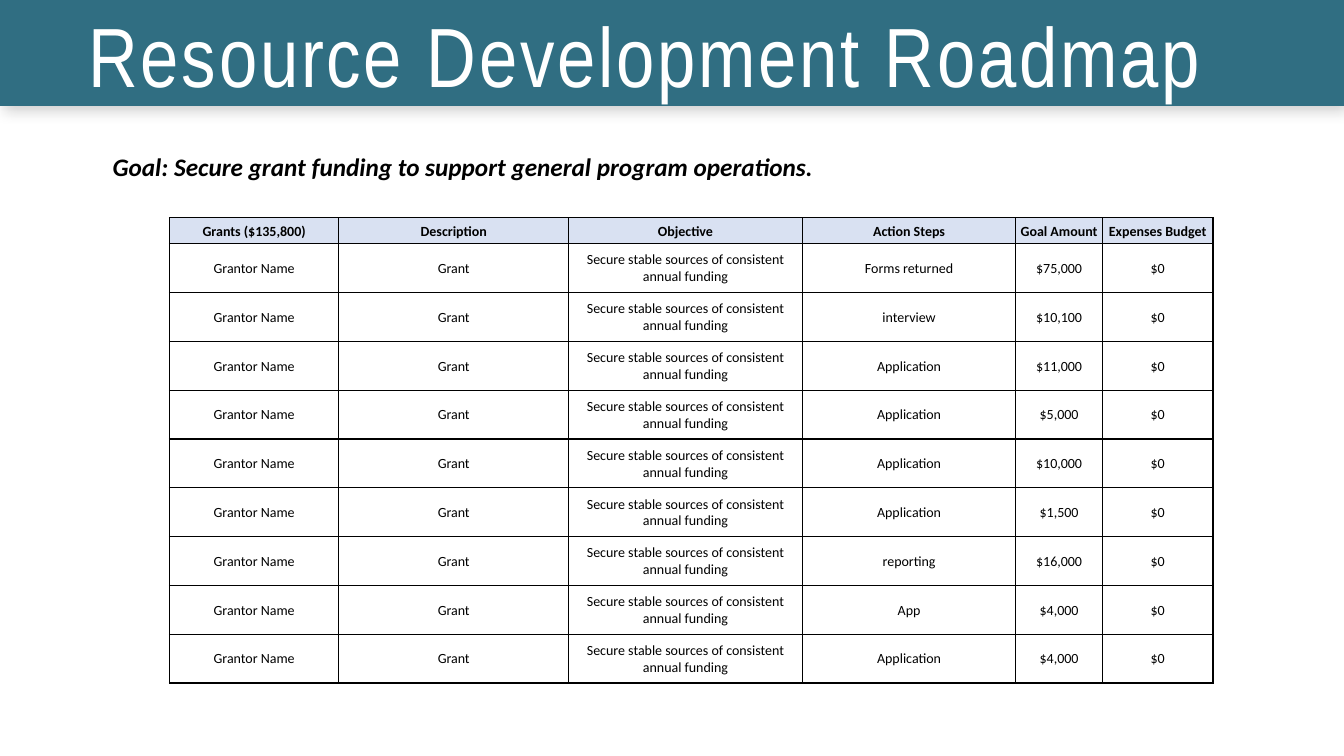
from lxml.etree import SubElement
from pptx import Presentation
from pptx.dml.color import RGBColor
from pptx.enum.shapes import MSO_SHAPE
from pptx.enum.text import MSO_ANCHOR, PP_ALIGN
from pptx.oxml import parse_xml
from pptx.oxml.ns import nsdecls, qn
from pptx.util import Cm, Pt

TEAL = RGBColor(0x30, 0x6E, 0x82)
PALE_BLUE = RGBColor(0xD9, 0xE1, 0xF2)
WHITE = RGBColor(0xFF, 0xFF, 0xFF)
BLACK = RGBColor(0x00, 0x00, 0x00)

HEADINGS = ["Grants ($135,800)", "Description", "Objective",
            "Action Steps", "Goal Amount", "Expenses Budget"]
OBJECTIVE = "Secure stable sources of consistent annual funding"
GRANTS = [
    ("Forms returned", "$75,000"),
    ("interview", "$10,100"),
    ("Application", "$11,000"),
    ("Application", "$5,000"),
    ("Application", "$10,000"),
    ("Application", "$1,500"),
    ("reporting", "$16,000"),
    ("App", "$4,000"),
    ("Application", "$4,000"),
]
COLUMN_WIDTHS = [4.27, 5.79, 5.89, 5.38, 2.18, 2.79]
HEADING_HEIGHT, GRANT_HEIGHT = 0.65, 1.23


def write(frame, text, size=10, font="Calibri", color=BLACK, bold=False,
          italic=False, align=PP_ALIGN.CENTER, spacing=None):
    """Put one formatted paragraph into a text frame."""
    paragraph = frame.paragraphs[0]
    paragraph.alignment = align
    run = paragraph.add_run()
    run.text = text
    run.font.size = Pt(size)
    run.font.name = font
    run.font.color.rgb = color
    run.font.bold = bold
    run.font.italic = italic
    if spacing:
        run.font._element.set("spc", str(spacing * 100))


class RoadmapSlide:
    """The current slide and its shared style."""

    border_width = Pt(1)
    cell_margin = Cm(0.03)

    def __init__(self, deck):
        self.slide = deck.slides.add_slide(deck.slide_layouts[6])

    def banner(self, left, top, width, height, color):
        band = self.slide.shapes.add_shape(
            MSO_SHAPE.RECTANGLE, Cm(left), Cm(top), Cm(width), Cm(height))
        band.fill.solid()
        band.fill.fore_color.rgb = color
        band.line.fill.background()
        band.shadow.inherit = False
        # Soft shadow below the band
        effects = band._element.spPr.find(qn("a:effectLst"))
        effects.append(parse_xml(
            f'<a:outerShdw {nsdecls("a")} blurRad="{Pt(10.4)}" '
            f'dist="{Pt(3)}" dir="2700000" algn="tl" rotWithShape="0">'
            f'<a:srgbClr val="{BLACK}"><a:alpha val="20000"/></a:srgbClr>'
            '</a:outerShdw>'))

    def text(self, left, top, width, height, text,
             anchor=MSO_ANCHOR.TOP, **style):
        box = self.slide.shapes.add_textbox(
            Cm(left), Cm(top), Cm(width), Cm(height))
        frame = box.text_frame
        frame.word_wrap = True
        frame.vertical_anchor = anchor
        write(frame, text, **style)

    def table(self, left, top, widths, heights, rows):
        grid = self.slide.shapes.add_table(
            len(rows), len(widths), Cm(left), Cm(top),
            Cm(sum(widths)), Cm(sum(heights))).table
        grid.first_row = grid.horz_banding = False
        for column, width in zip(grid.columns, widths):
            column.width = Cm(width)
        for row, height in zip(grid.rows, heights):
            row.height = Cm(height)
        for r, row in enumerate(rows):
            for c, text in enumerate(row):
                self.cell(grid.cell(r, c), text, heading=r == 0)

    def cell(self, cell, text, heading):
        cell.margin_left = cell.margin_right = self.cell_margin
        cell.margin_top = self.cell_margin
        cell.margin_bottom = 0
        cell.vertical_anchor = MSO_ANCHOR.MIDDLE
        properties = cell._tc.get_or_add_tcPr()
        for side in ("lnL", "lnR", "lnT", "lnB"):
            line = SubElement(properties, qn(f"a:{side}"),
                              w=str(self.border_width))
            fill = SubElement(line, qn("a:solidFill"))
            SubElement(fill, qn("a:srgbClr"), val=str(BLACK))
        if heading:
            cell.fill.solid()
            cell.fill.fore_color.rgb = PALE_BLUE
        else:
            cell.fill.background()
        write(cell.text_frame, text, bold=heading)


def main():
    deck = Presentation()
    deck.slide_width, deck.slide_height = Cm(33.87), Cm(19.05)
    roadmap = RoadmapSlide(deck)

    # Title banner
    roadmap.banner(0, -0.05, 33.87, 2.72, TEAL)
    roadmap.text(0.74, 0.1, 31.04, 2.54, "Resource Development Roadmap",
                 anchor=MSO_ANCHOR.MIDDLE, size=60, font="Arial Narrow",
                 color=WHITE, spacing=2)

    # Goal statement
    roadmap.text(2.59, 3.68, 18.39, 1.8,
                 "Goal: Secure grant funding to support general "
                 "program operations.",
                 size=18, bold=True, italic=True, align=PP_ALIGN.LEFT)

    # Grants table
    rows = [HEADINGS] + [
        ["Grantor Name", "Grant", OBJECTIVE, step, amount, "$0"]
        for step, amount in GRANTS]
    heights = [HEADING_HEIGHT] + [GRANT_HEIGHT] * len(GRANTS)
    roadmap.table(4.27, 5.49, COLUMN_WIDTHS, heights, rows)

    deck.save("out.pptx")


if __name__ == "__main__":
    main()
